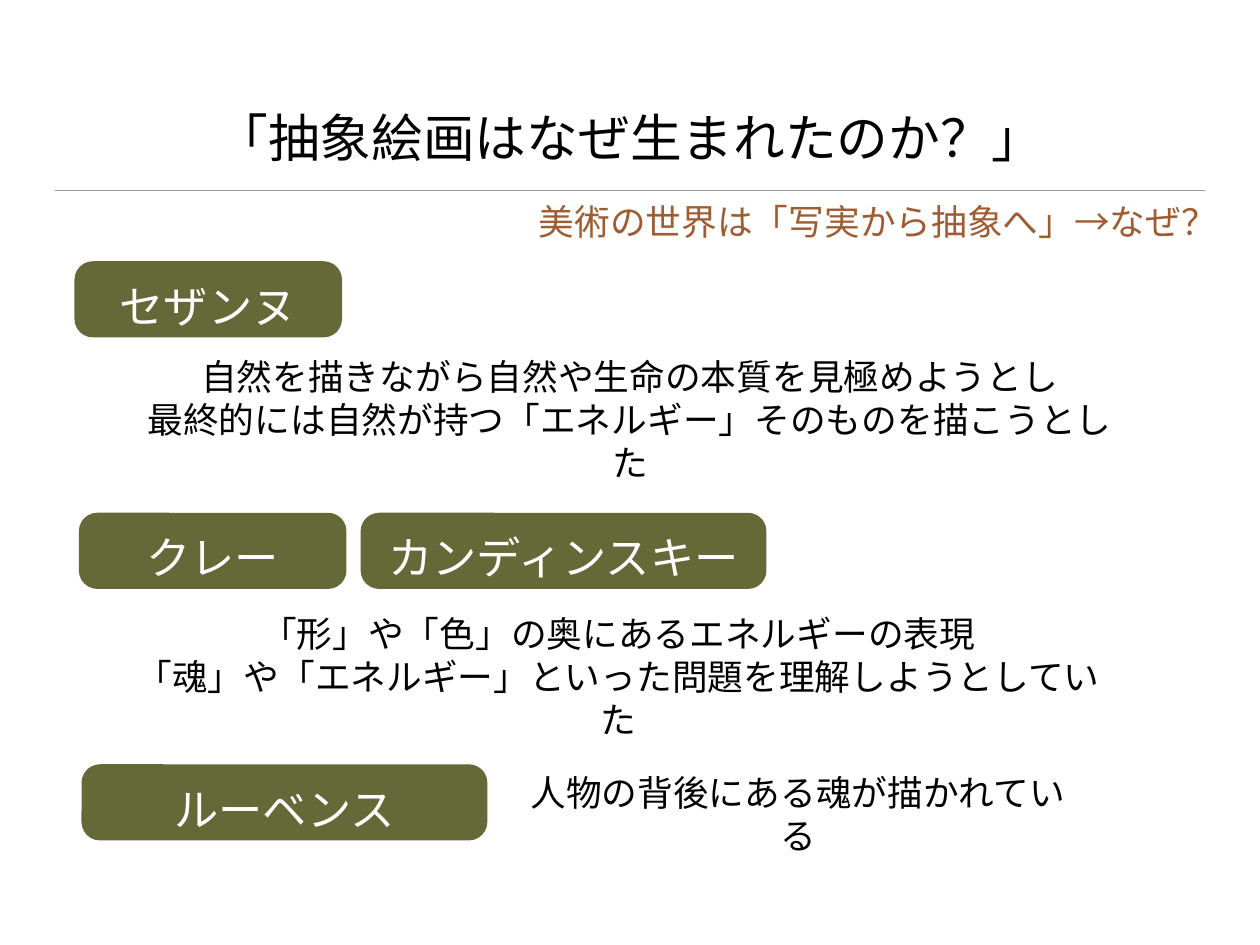
from dataclasses import dataclass

import lxml.etree
import pptx
import pptx.dml.color
import pptx.enum.shapes
import pptx.enum.text
import pptx.oxml.ns
import pptx.util

Inches = pptx.util.Inches
ANCHOR = pptx.enum.text.MSO_ANCHOR


@dataclass(frozen=True)
class Theme:
    font: str = "Arial"
    ink: str = "000000"
    accent: str = "9F5C30"
    olive: str = "656837"
    on_olive: str = "FFFFFF"
    rule: str = "9A9A9A"
    title_size: int = 42
    painter_size: int = 36
    body_size: int = 29
    rule_width: int = 1
    corner: float = 0.242
    inset: float = 0.06


THEME = Theme()

# Each box is left, top, width, height in inches.
HEADER = (0.62, 0.36, 12.98, 2.4)
PAINTERS = [
    ("セザンヌ", (0.84, 2.95, 3.02, 0.86)),
    ("クレー", (0.89, 5.79, 3.02, 0.86)),
    ("カンディンスキー", (4.07, 5.79, 4.58, 0.86)),
    ("ルーベンス", (0.92, 8.63, 4.58, 0.86)),
]
EXPLANATIONS = [
    (["自然を描きながら自然や生命の本質を見極めようとし",
      "最終的には自然が持つ「エネルギー」そのものを描こうとした"],
     (1.42, 4.17, 11.38, 1.13)),
    (["「形」や「色」の奥にあるエネルギーの表現",
      "「魂」や「エネルギー」といった問題を理解しようとしていた"],
     (1.29, 7.07, 11.38, 1.13)),
    (["人物の背後にある魂が描かれている"], (5.73, 8.93, 6.55, 0.52)),
]


def rgb(value):
    return pptx.dml.color.RGBColor.from_string(value)


def write(frame, lines, size, color, anchor, inset=0):
    """Fill a text frame with centred paragraphs."""
    frame_format = {"word_wrap": True, "vertical_anchor": anchor}
    for side in ("left", "top", "right", "bottom"):
        frame_format[f"margin_{side}"] = Inches(inset)
    for name, value in frame_format.items():
        setattr(frame, name, value)
    for index, line in enumerate(lines):
        paragraph = frame.add_paragraph() if index else frame.paragraphs[0]
        paragraph.alignment = pptx.enum.text.PP_ALIGN.CENTER
        run = paragraph.add_run()
        run.text = line
        run.font.name = THEME.font
        run.font.size = pptx.util.Pt(size)
        run.font.color.rgb = rgb(color)


def add_text(slide, box, lines, size, color, anchor=ANCHOR.MIDDLE, inset=THEME.inset):
    text = slide.shapes.add_textbox(*map(Inches, box))
    write(text.text_frame, lines, size, color, anchor, inset)


def add_header(slide, box):
    """Place the title, the rule under it and the right-hand question."""
    left, top, width, height = box
    right, rule_y = left + width, top + 1.79
    question_width, question_height = 7.78, 0.52

    rule = slide.shapes.add_connector(
        pptx.enum.shapes.MSO_CONNECTOR.STRAIGHT,
        Inches(left), Inches(rule_y), Inches(right), Inches(rule_y))
    rule.line.color.rgb = rgb(THEME.rule)
    rule.line.width = pptx.util.Pt(THEME.rule_width)
    lxml.etree.SubElement(rule._element.spPr, pptx.oxml.ns.qn("a:effectLst"))

    add_text(slide, (left, top, width, 1.53), ["「抽象絵画はなぜ生まれたのか？」"],
             THEME.title_size, THEME.ink, ANCHOR.BOTTOM, 0)
    add_text(slide,
             (right - question_width, top + height - question_height,
              question_width, question_height),
             ["美術の世界は「写実から抽象へ」→なぜ？"], THEME.body_size, THEME.accent)


def add_painter(slide, box, painter):
    label = slide.shapes.add_shape(
        pptx.enum.shapes.MSO_SHAPE.ROUNDED_RECTANGLE, *map(Inches, box))
    label.adjustments[0] = THEME.corner
    label.shadow.inherit = False
    label.fill.solid()
    label.fill.fore_color.rgb = rgb(THEME.olive)
    label.line.fill.background()
    write(label.text_frame, [painter], THEME.painter_size, THEME.on_olive, ANCHOR.BOTTOM)


def main():
    deck = pptx.Presentation()
    deck.slide_width, deck.slide_height = Inches(14.22), Inches(10.67)
    slide = deck.slides.add_slide(deck.slide_layouts[6])
    add_header(slide, HEADER)
    for painter, box in PAINTERS:
        add_painter(slide, box, painter)
    for lines, box in EXPLANATIONS:
        add_text(slide, box, lines, THEME.body_size, THEME.ink)
    deck.save("out.pptx")


if __name__ == "__main__":
    main()
